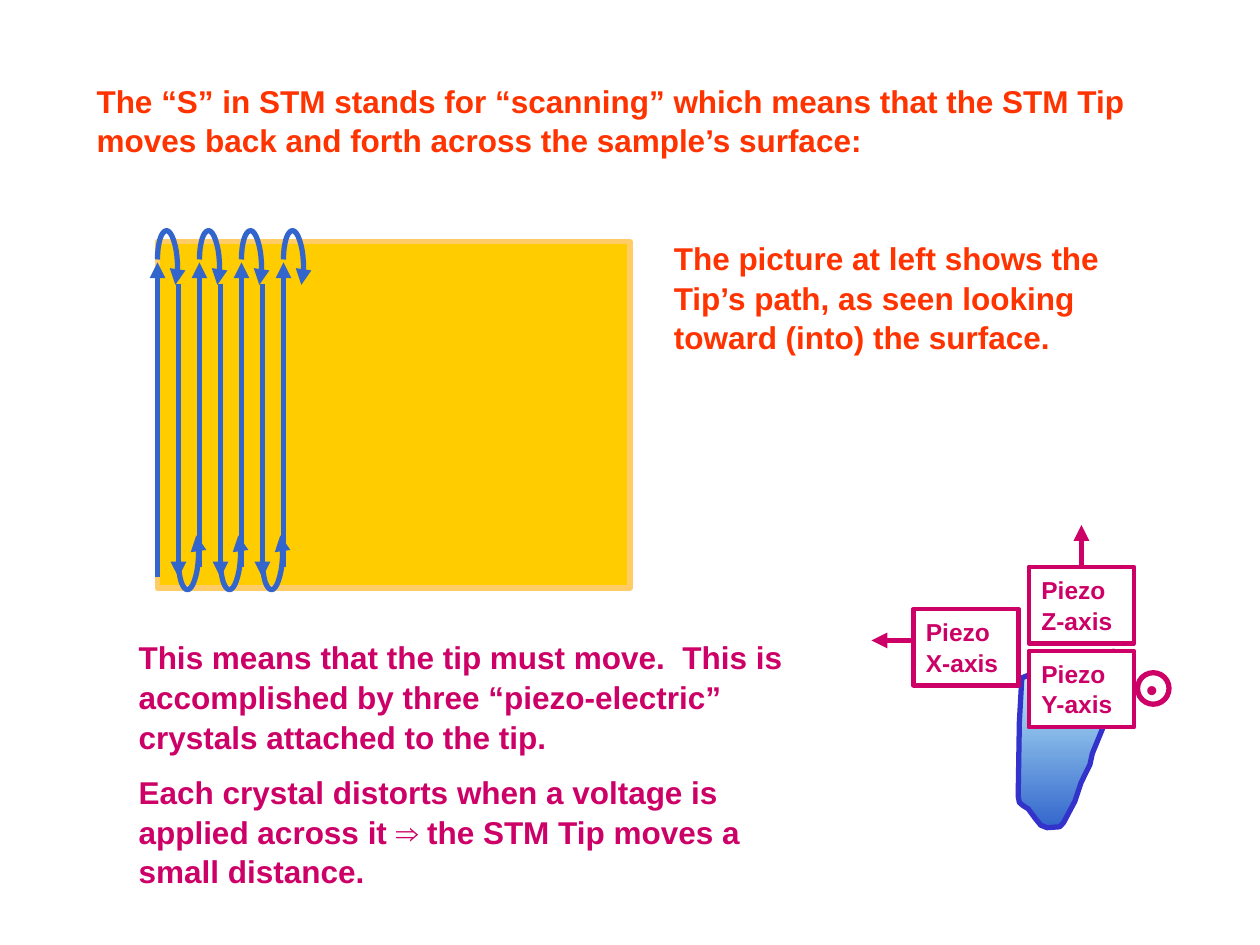
from lxml.etree import SubElement
from pptx import Presentation
from pptx.dml.color import RGBColor
from pptx.enum.shapes import MSO_CONNECTOR, MSO_SHAPE
from pptx.enum.text import MSO_ANCHOR, MSO_AUTO_SIZE, PP_ALIGN
from pptx.oxml.ns import qn
from pptx.util import Pt

ORANGE, MAGENTA, BLUE = "FF3300", "CC0066", "3366CC"
TRACK_LEFT, TRACK_GAP, TRACK_COUNT = 90, 12, 7

# Cubic segments of a turn: x from the track, depth from the turn's apex.
TURN_START = (0, 16.5)
TURN_CURVES = [
    ((0, 7.2), (2.2, 0), (5.2, 0)),
    ((8, 0), (10.9, 8), (11.4, 18)),
    ((11.7, 23), (11.3, 27.7), (10.2, 31)),
]
TIP_OUTLINE = [
    (583.9, 387.4), (582.5, 412.6), (581.8, 455), (582.5, 458.6), (584.6, 460.4),
    (587.5, 462.2), (591.8, 468), (594.7, 471.6), (598.3, 473), (605.5, 472.5),
    (607.7, 470.2), (614.2, 457.9), (617.8, 447.1), (622.8, 437), (624.2, 430.6),
    (632.2, 411.1), (635.8, 400.3), (636.5, 394.6), (638.6, 393.8), (639.2, 391.7),
    (637.9, 379.4), (637.2, 375), (636.5, 372.2), (629.3, 373.7), (617, 376.6),
    (599.8, 380.9),
]


def color(hex_value):
    return RGBColor.from_string(hex_value)


def style_line(shape, hex_value, width, arrow=False):
    shape.line.color.rgb = color(hex_value)
    shape.line.width = Pt(width)
    if arrow:
        line = shape._element.spPr.find(qn("a:ln"))
        SubElement(line, qn("a:tailEnd"), type="triangle")


def write_text(shape, paragraphs, size, hex_value):
    frame = shape.text_frame
    frame.word_wrap = True
    frame.auto_size = MSO_AUTO_SIZE.NONE
    frame.vertical_anchor = MSO_ANCHOR.TOP
    frame.text = "\n".join(paragraphs)
    for index, paragraph in enumerate(frame.paragraphs):
        paragraph.alignment = PP_ALIGN.LEFT
        paragraph.line_spacing = 1.05
        paragraph.space_before = Pt(size / 2 if index else 0)
        font = paragraph.font
        font.name, font.size, font.bold = "Arial", Pt(size), True
        font.color.rgb = color(hex_value)


def place(shape, left, top, width, height):
    shape.left, shape.top = Pt(left), Pt(top)
    shape.width, shape.height = Pt(width), Pt(height)


def remove_bullets(shape):
    for paragraph in shape.text_frame.paragraphs:
        properties = paragraph._p.get_or_add_pPr()
        properties.set("marL", "0")
        properties.set("indent", "0")
        bullet = SubElement(properties, qn("a:buNone"))
        properties.find(qn("a:defRPr")).addprevious(bullet)


def add_text(slide, text, box, hex_value):
    shape = slide.shapes.add_textbox(*map(Pt, box))
    write_text(shape, [text], 18, hex_value)


def add_outlined(slide, kind, box, line_color, width, fill=None):
    shape = slide.shapes.add_shape(kind, *map(Pt, box))
    shape.shadow.inherit = False
    if fill:
        shape.fill.solid()
        shape.fill.fore_color.rgb = color(fill)
    else:
        shape.fill.background()
    style_line(shape, line_color, width)
    return shape


def add_arrow(slide, start, end, hex_value):
    arrow = slide.shapes.add_connector(MSO_CONNECTOR.STRAIGHT, *map(Pt, start + end))
    style_line(arrow, hex_value, 3, arrow=True)
    SubElement(arrow._element.spPr, qn("a:effectLst"))
    return arrow


def add_freeform(slide, points, close):
    vertices = [(Pt(x), Pt(y)) for x, y in points]
    builder = slide.shapes.build_freeform(*vertices[0])
    builder.add_line_segments(vertices[1:], close=close)
    shape = builder.convert_to_shape()
    shape.shadow.inherit = False
    return shape


def turn_points(steps=8):
    """Sample the cubic segments of a turn."""
    points = [TURN_START]
    for curve in TURN_CURVES:
        controls = (points[-1],) + curve
        for step in range(1, steps + 1):
            t = step / steps
            weights = ((1 - t) ** 3, 3 * t * (1 - t) ** 2, 3 * t * t * (1 - t), t ** 3)
            points.append(tuple(sum(w * p[axis] for w, p in zip(weights, controls))
                                for axis in (0, 1)))
    return points


def add_turn(slide, left, apex, direction):
    """Add a curved arrow; direction 1 opens downward, -1 upward."""
    points = [(left + x, apex + direction * depth) for x, depth in turn_points()]
    turn = add_freeform(slide, points, close=False)
    turn.fill.background()
    style_line(turn, BLUE, 3, arrow=True)


def add_scan_path(slide):
    for track in range(TRACK_COUNT):
        x = TRACK_LEFT + track * TRACK_GAP
        if track % 2 == 0:
            add_arrow(slide, (x, 324 if track else 330), (x, 150), BLUE)
            add_turn(slide, x, 131.8, 1)
        else:
            add_arrow(slide, (x, 162), (x, 330), BLUE)
            add_turn(slide, x, 337, -1)


def add_tip(slide):
    tip = add_freeform(slide, TIP_OUTLINE, close=True)
    tip.fill.gradient()
    tip.fill.gradient_angle = 270
    for stop, (position, hex_value) in zip(tip.fill.gradient_stops,
                                           [(0, "CCFFFF"), (1, BLUE)]):
        stop.position = position
        stop.color.rgb = color(hex_value)
    style_line(tip, "3333CC", 3)


def add_piezo(slide, axis, left, top, fill=None):
    box = add_outlined(slide, MSO_SHAPE.RECTANGLE, (left, top, 60, 43.5), MAGENTA, 2.75, fill)
    write_text(box, [f"Piezo {axis}-axis"], 14, MAGENTA)
    return box


def main():
    presentation = Presentation()
    presentation.slide_width, presentation.slide_height = Pt(720), Pt(540)
    slide = presentation.slides.add_slide(presentation.slide_layouts[1])

    title, body = slide.placeholders
    place(title, 48, 42, 630, 50.5)
    write_text(title, ["The “S” in STM stands for “scanning” which means that the STM Tip "
                       "moves back and forth across the sample’s surface:"], 18, ORANGE)
    place(body, 72, 360, 402, 147.5)
    write_text(body, [
        "This means that the tip must move.  This is accomplished by three "
        "“piezo-electric” crystals attached to the tip.",
        "Each crystal distorts when a voltage is applied across it ⇒ the STM Tip "
        "moves a small distance.",
    ], 18, MAGENTA)
    remove_bullets(body)

    add_tip(slide)
    add_outlined(slide, MSO_SHAPE.RECTANGLE, (90, 138, 270, 198), "FFCC66", 3, "FFCC00")
    add_scan_path(slide)
    add_text(slide, "The picture at left shows the Tip’s path, as seen looking toward (into) "
                    "the surface.", (378, 132, 282, 72), ORANGE)

    z_box = add_piezo(slide, "Z", 588, 324)
    add_piezo(slide, "X", 522, 348, "FFFFFF")
    add_piezo(slide, "Y", 588, 372, "FFFFFF")
    add_arrow(slide, (522, 366), (498, 366), MAGENTA)
    add_arrow(slide, (618, 324), (618, 300), MAGENTA).begin_connect(z_box, 0)
    add_text(slide, "•", (648, 378, 42, 29), MAGENTA)
    add_outlined(slide, MSO_SHAPE.OVAL, (650, 384.4, 18, 18), MAGENTA, 3)

    presentation.save("out.pptx")


if __name__ == "__main__":
    main()
